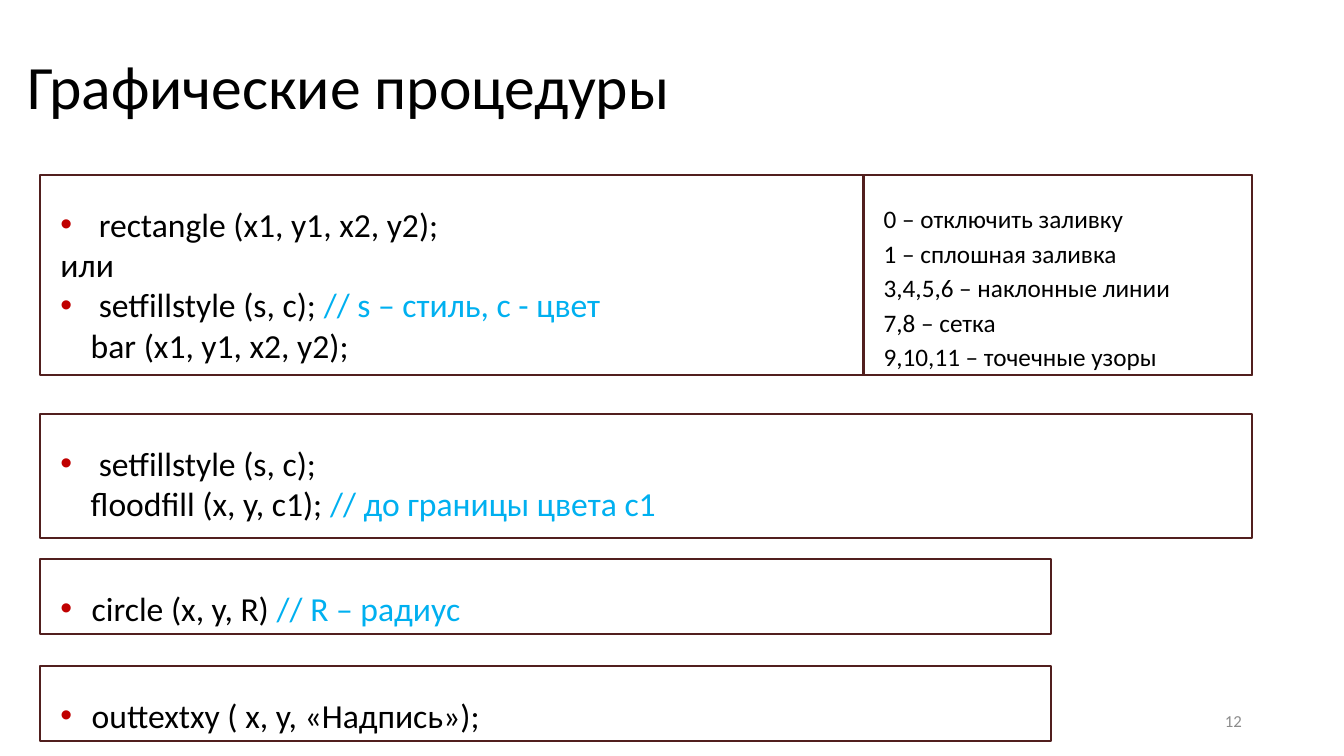
import pptx
import pptx.dml.color
import pptx.enum.shapes
import pptx.enum.text
import pptx.oxml
import pptx.oxml.ns
import pptx.util

WIDTH = pptx.util.Inches(13.33)
HEIGHT = pptx.util.Inches(7.5)
COLUMN = WIDTH / 100
ROW = HEIGHT / 100

FONT = "Calibri"
BLACK, WHITE, GREY = "000000", "FFFFFF", "8C8C8C"
FRAME, BULLET, COMMENT = "511F1E", "C00000", "00B0F0"
LEFT, FULL, SHORT = 3, 90.15, 75.2
WIDE_INDENT, NARROW_INDENT, CONTINUATION = 0.38, 0.31, 0.3


def color(value):
    return pptx.dml.color.RGBColor.from_string(value)


def area(left, top, width, height):
    """Turn grid columns and rows into slide lengths."""
    return (round(left * COLUMN), round(top * ROW),
            round(width * COLUMN), round(height * ROW))


def set_indent(para, indent, bullet):
    properties = para._p.get_or_add_pPr()
    length = pptx.util.Inches(indent)
    properties.set("marL", str(length))
    properties.set("indent", str(-length if bullet else 0))
    if bullet:
        namespace = pptx.oxml.ns.nsdecls("a")
        for markup in (
            f'<a:buClr {namespace}><a:srgbClr val="{BULLET}"/></a:buClr>',
            f'<a:buFont {namespace} typeface="Arial"/>',
            f'<a:buChar {namespace} char="•"/>',
        ):
            properties.append(pptx.oxml.parse_xml(markup))


def set_font(para, size, value=BLACK):
    para.font.name = FONT
    para.font.size = pptx.util.Pt(size)
    para.font.color.rgb = color(value)


def add_label(page, place, text, size, value, align):
    box = page.shapes.add_textbox(*area(*place))
    frame = box.text_frame
    frame.word_wrap = True
    frame.vertical_anchor = pptx.enum.text.MSO_ANCHOR.MIDDLE
    para = frame.paragraphs[0]
    para.text = text
    para.alignment = align
    set_font(para, size, value)
    return para


def add_panel(page, place, lines, size=24, space_after=0):
    """Draw a framed panel; each line is (code, comment, indent, bullet)."""
    box = page.shapes.add_shape(
        pptx.enum.shapes.MSO_SHAPE.RECTANGLE, *area(*place))
    box.shadow.inherit = False
    box.fill.solid()
    box.fill.fore_color.rgb = color(WHITE)
    box.line.color.rgb = color(FRAME)
    box.line.width = pptx.util.Pt(1.5)
    frame = box.text_frame
    frame.word_wrap = True
    frame.vertical_anchor = pptx.enum.text.MSO_ANCHOR.TOP
    frame.margin_left = pptx.util.Inches(0.2)
    frame.margin_top = frame.margin_right = pptx.util.Inches(0.28)
    frame.margin_bottom = 0
    for number, (code, comment, indent, bullet) in enumerate(lines):
        para = frame.add_paragraph() if number else frame.paragraphs[0]
        set_indent(para, indent, bullet)
        para.alignment = pptx.enum.text.PP_ALIGN.LEFT
        para.space_after = pptx.util.Pt(space_after)
        set_font(para, size)
        para.add_run().text = code
        if comment:
            span = para.add_run()
            span.text = comment
            span.font.color.rgb = color(COMMENT)


def main():
    deck = pptx.Presentation()
    deck.slide_width, deck.slide_height = WIDTH, HEIGHT
    page = deck.slides.add_slide(deck.slide_layouts[6])
    align = pptx.enum.text.PP_ALIGN

    title = add_label(page, (1.28, 2.13, 95.2, 19.33),
                      "Графические процедуры", 44, BLACK, align.LEFT)
    title.line_spacing = 0.9
    add_label(page, (70.65, 92.67, 22.5, 5.33), "12", 12, GREY, align.RIGHT)

    add_panel(page, (LEFT, 23.2, FULL, 26.4), [
        ("rectangle (x1, y1, x2, y2);", "", WIDE_INDENT, True),
        ("или", "", 0, False),
        ("setfillstyle (s, c); ", "// s – стиль, c - цвет", WIDE_INDENT, True),
        ("bar (x1, y1, x2, y2);", "", CONTINUATION, False),
    ])
    fill_styles = (
        "0 – отключить заливку",
        "1 – сплошная заливка",
        "3,4,5,6 – наклонные линии",
        "7,8 – сетка",
        "9,10,11 – точечные узоры",
    )
    add_panel(page, (64.25, 23.2, 28.9, 26.4),
              [(style, "", 0, False) for style in fill_styles],
              size=18, space_after=3)
    add_panel(page, (LEFT, 54.8, FULL, 16.4), [
        ("setfillstyle (s, c);", "", WIDE_INDENT, True),
        ("floodfill (x, y, c1); ", "// до границы цвета с1",
         CONTINUATION, False),
    ])
    short_panels = (
        (74, "circle (x, y, R) ", "// R – радиус"),
        (88.15, "outtextxy ( x, y, «Надпись»);", ""),
    )
    for top, code, comment in short_panels:
        add_panel(page, (LEFT, top, SHORT, 9.87),
                  [(code, comment, NARROW_INDENT, True)])

    deck.save("out.pptx")


if __name__ == "__main__":
    main()
